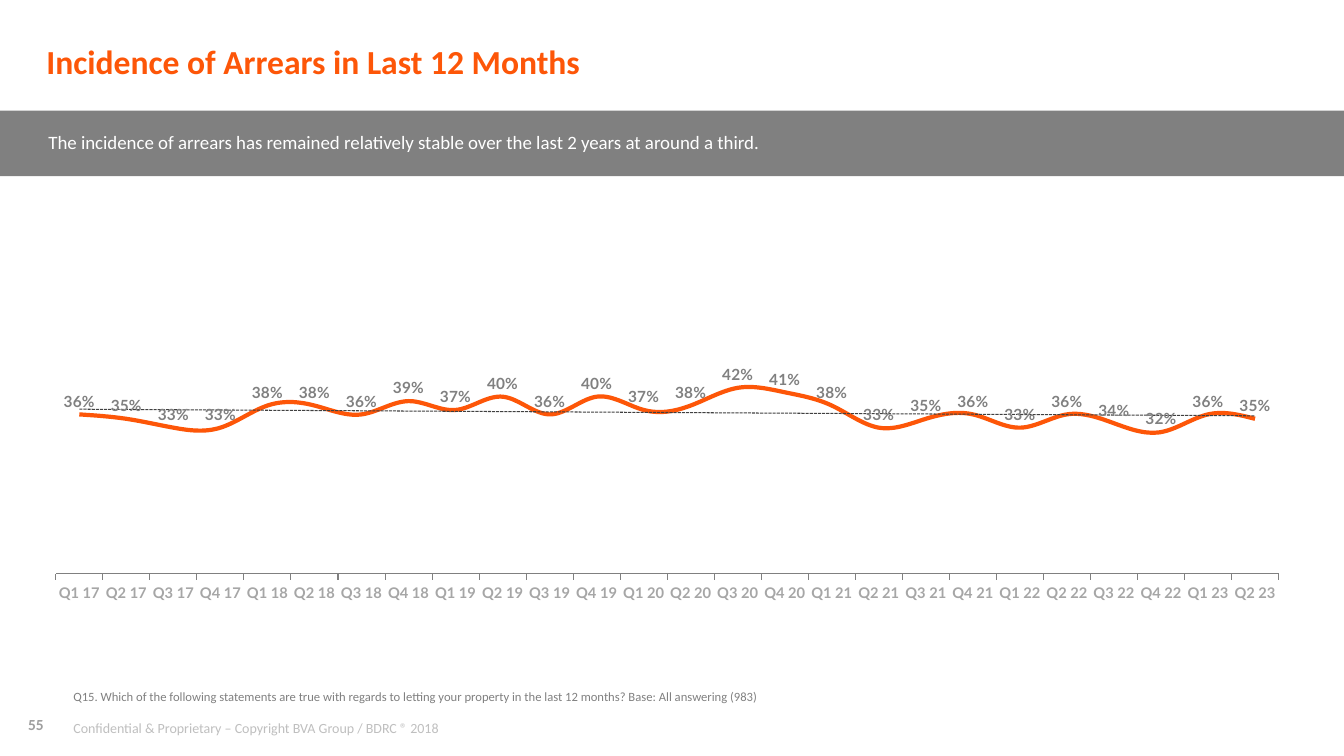
import lxml.etree
import pptx
import pptx.chart.data
import pptx.dml.color
import pptx.enum.chart
import pptx.enum.shapes
import pptx.enum.text
import pptx.oxml
import pptx.oxml.ns
import pptx.util

Cm = pptx.util.Cm
Pt = pptx.util.Pt
ANCHOR = pptx.enum.text.MSO_ANCHOR

ORANGE = "FD5608"
GREY = "808080"
WHITE = "FFFFFF"

TREND_XML = (
    f'<c:trendline {pptx.oxml.ns.nsdecls("c", "a")}><c:spPr><a:ln w="9525">'
    '<a:solidFill><a:srgbClr val="404040"/></a:solidFill><a:prstDash val="sysDash"/>'
    '</a:ln></c:spPr><c:trendlineType val="linear"/>'
    '<c:dispRSqr val="0"/><c:dispEq val="0"/></c:trendline>'
)


def color(value):
    return pptx.dml.color.RGBColor.from_string(value)


def layout_xml(**edges):
    values = "".join(f'<c:{name} val="{value}"/>' for name, value in edges.items())
    return (
        f'<c:layout {pptx.oxml.ns.nsdecls("c")}><c:manualLayout>'
        '<c:layoutTarget val="inner"/><c:xMode val="edge"/><c:yMode val="edge"/>'
        f'{values}</c:manualLayout></c:layout>'
    )


class SlideBuilder:
    font_name = "Calibri"
    chart_font_name = "Lato"

    def __init__(self, presentation):
        self.slide = presentation.slides.add_slide(presentation.slide_layouts[6])

    def style(self, font, size, value, bold=False, name=None):
        font.name = name or self.font_name
        font.size = Pt(size)
        font.bold = bold
        font.color.rgb = color(value)

    def rectangle(self, box, fill=None, line=None):
        shape = self.slide.shapes.add_shape(
            pptx.enum.shapes.MSO_SHAPE.RECTANGLE, *map(Cm, box))
        shape.shadow.inherit = False
        if fill:
            shape.fill.solid()
            shape.fill.fore_color.rgb = color(fill)
        else:
            shape.fill.background()
        if line:
            shape.line.color.rgb = color(line)
            shape.line.width = Pt(0.75)
        else:
            shape.line.fill.background()
        return shape

    def page_number(self, box, text):
        shape = self.rectangle(box, line=WHITE)
        frame = shape.text_frame
        frame.text = text
        frame.word_wrap = False
        frame.vertical_anchor = ANCHOR.MIDDLE
        frame.margin_left = frame.margin_right = Cm(0.33)
        frame.margin_top = frame.margin_bottom = Cm(0.18)
        run = frame.paragraphs[0].runs[0]
        self.style(run.font, 11, "404040", bold=True)
        fill_color = run.font.fill._xPr.xpath("a:solidFill/a:srgbClr")[0]
        lxml.etree.SubElement(fill_color, pptx.oxml.ns.qn("a:alpha"), val="50000")

    def text(self, box, text, size, value, bold=False):
        frame = self.slide.shapes.add_textbox(*map(Cm, box)).text_frame
        frame.text = text
        frame.word_wrap = True
        self.style(frame.paragraphs[0].runs[0].font, size, value, bold)
        return frame

    def heading(self, box, text, size, value, bold=False):
        frame = self.text(box, text, size, value, bold)
        frame.vertical_anchor = ANCHOR.MIDDLE
        frame.margin_left = frame.margin_right = 0
        frame.margin_top = frame.margin_bottom = 0
        frame.paragraphs[0].line_spacing = 0.9

    def line_chart(self, box, categories, values):
        data = pptx.chart.data.CategoryChartData(number_format="0%")
        data.categories = categories
        data.add_series("Series 1", values)
        chart = self.slide.shapes.add_chart(
            pptx.enum.chart.XL_CHART_TYPE.LINE, *map(Cm, box), data).chart
        chart.has_legend = False
        chart.has_title = False
        self.style(chart.font, 10.5, "707070", name=self.chart_font_name)

        category_axis = chart.category_axis
        category_axis.format.line.color.rgb = color(GREY)
        category_axis.major_tick_mark = pptx.enum.chart.XL_TICK_MARK.OUTSIDE
        self.style(category_axis.tick_labels.font, 10.5, "A6A6A6", True,
                   self.chart_font_name)

        value_axis = chart.value_axis
        value_axis.minimum_scale = 0
        value_axis.maximum_scale = 0.8
        value_axis.has_major_gridlines = False
        value_axis.visible = False

        plot = chart.plots[0]
        plot.vary_by_categories = False
        series = plot.series[0]
        series.smooth = True
        series.format.line.color.rgb = color(ORANGE)
        series.format.line.width = Pt(3)
        series.marker.style = pptx.enum.chart.XL_MARKER_STYLE.NONE

        labels = series.data_labels
        labels.show_value = True
        labels.number_format = "0%"
        labels.number_format_is_linked = False
        labels.position = pptx.enum.chart.XL_LABEL_POSITION.ABOVE
        self.style(labels.font, 11, GREY, True, self.chart_font_name)

        series_categories = chart.element.xpath("//c:ser/c:cat")[0]
        series_categories.addprevious(pptx.oxml.parse_xml(TREND_XML))
        plot_area = chart.element.xpath("//c:plotArea")[0]
        for layout in plot_area.xpath("c:layout"):
            plot_area.remove(layout)
        plot_area.insert(0, pptx.oxml.parse_xml(
            layout_xml(x=0.006, y=0.033, w=0.988, h=0.777)))


def main():
    presentation = pptx.Presentation()
    presentation.slide_width = Cm(33.87)
    presentation.slide_height = Cm(19.05)
    builder = SlideBuilder(presentation)

    builder.page_number((0.38, 17.81, 1.04, 0.91), "55")
    builder.text((1.6, 18.01, 28.78, 0.61),
                 "Confidential & Proprietary – Copyright BVA Group / BDRC ® 2018",
                 10, "BFBFBF")
    builder.rectangle((0, 2.79, 33.87, 1.65), fill=GREY)
    builder.heading((1.17, 0.69, 31.24, 1.85),
                    "Incidence of Arrears in Last 12 Months", 24, ORANGE, bold=True)

    quarters = [f"Q{quarter} {year}" for year in range(17, 24)
                for quarter in range(1, 5)][:26]
    arrears = [0.36, 0.35, 0.33, 0.33, 0.38, 0.38, 0.36, 0.39, 0.37, 0.4, 0.36, 0.4, 0.37,
               0.38, 0.42, 0.41, 0.38, 0.33, 0.35, 0.36, 0.33, 0.36, 0.34, 0.32, 0.36, 0.35]
    builder.line_chart((1.22, 5.16, 31.19, 11.48), quarters, arrears)

    builder.heading((1.85, 17.2, 26.16, 0.76),
                    "Q15. Which of the following statements are true with regards to letting "
                    "your property in the last 12 months? Base: All answering (983)", 9, GREY)
    builder.heading((1.22, 2.69, 31.19, 1.83),
                    "The incidence of arrears has remained relatively stable over the last "
                    "2 years at around a third.", 13.5, WHITE)
    presentation.save("out.pptx")


if __name__ == "__main__":
    main()
